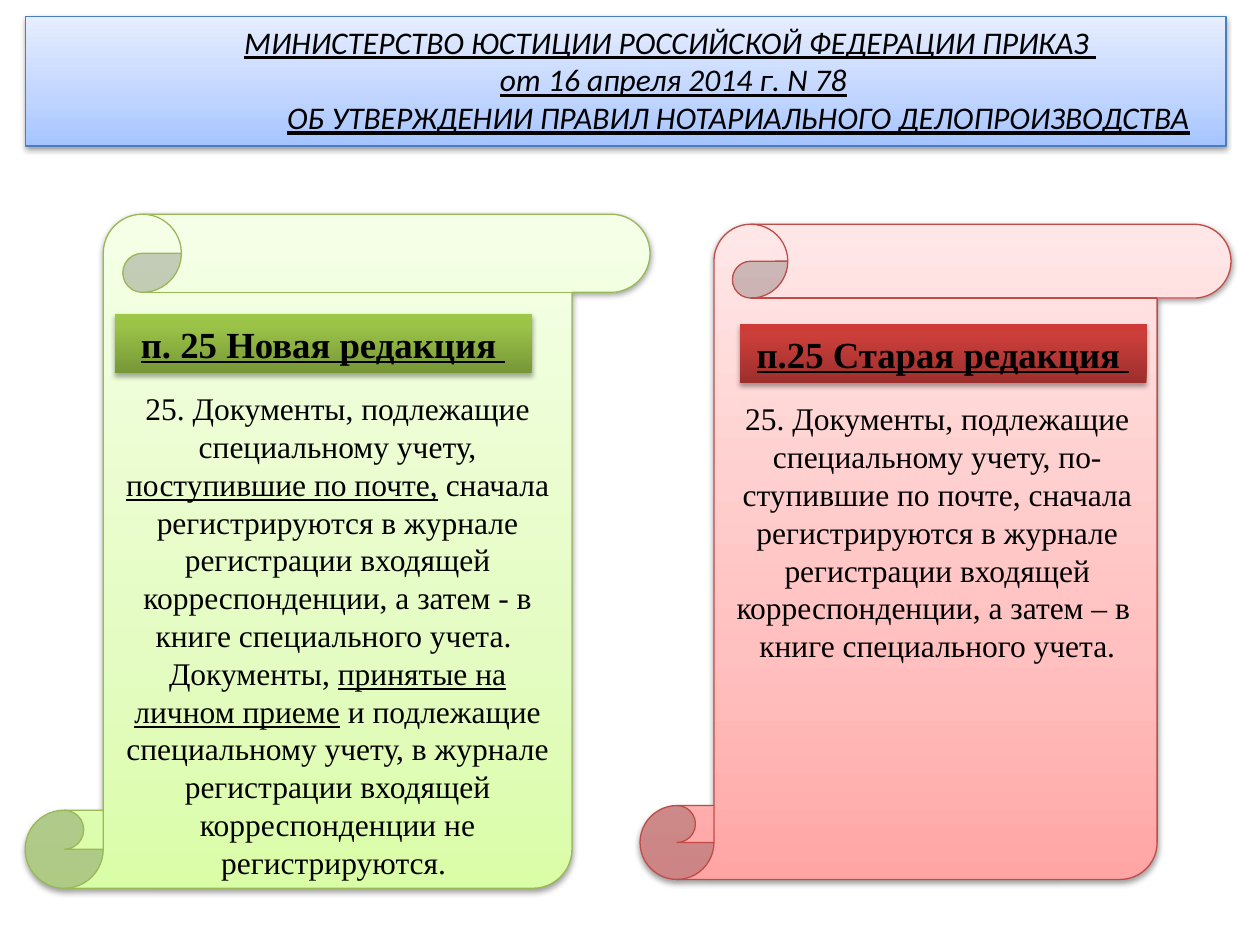
from dataclasses import dataclass

import pptx
import pptx.dml.color
import pptx.enum.shapes
import pptx.enum.text
import pptx.oxml
import pptx.oxml.ns
import pptx.util

# Slide grid: 100 columns by 75 rows
prs = pptx.Presentation()
prs.slide_width = pptx.util.Inches(10)
prs.slide_height = pptx.util.Inches(7.5)
COL, ROW = prs.slide_width / 100, prs.slide_height / 75

COLORS = {
    "text": "000000",
    "green_line": "98B955",
    "red_line": "BF4C48",
    "blue_line": "4B7EBC",
}
# Gradient stops from bottom to top: position in percent and colour
GRADIENTS = {
    "green_light": {0: "DAFDA7", 35: "E4FCC2", 100: "F5FFE7"},
    "red_light": {0: "FFA6A5", 35: "FFC0BF", 100: "FFE7E7"},
    "blue_light": {0: "A4C4FF", 35: "BFD4FF", 100: "E6EEFF"},
    "green_dark": {0: "779737", 80: "9BC348", 100: "9DC746"},
    "red_dark": {0: "9C2F2D", 80: "CB3E3A", 100: "CE3B37"},
}
SHAPE = pptx.enum.shapes.MSO_SHAPE
ALIGN = pptx.enum.text.PP_ALIGN
ANCHOR = pptx.enum.text.MSO_ANCHOR
SERIF = "Times New Roman"


@dataclass
class Box:
    """Place on the grid, in columns and rows."""
    col: float
    row: float
    cols: float
    rows: float

    def emu(self) -> list[int]:
        return [round(v) for v in (self.col * COL, self.row * ROW,
                                   self.cols * COL, self.rows * ROW)]


@dataclass
class Edition:
    """One wording of the rule; odd runs of a paragraph are underlined."""
    hue: str
    scroll: Box
    heading_box: Box
    heading: str
    body_box: Box
    body: list[list[str]]


def rgb(name: str) -> pptx.dml.color.RGBColor:
    return pptx.dml.color.RGBColor.from_string(COLORS[name])


def xml(tag: str, attrs: str, inner: str):
    ns = pptx.oxml.ns.nsdecls("a")
    return pptx.oxml.parse_xml(f"<a:{tag} {ns} {attrs}>{inner}</a:{tag}>")


def add_panel(slide, kind, box: Box, gradient: str, line: str = "",
              opacity: int = 38, drop: float = 1.6):
    """Add a shape with a vertical gradient and a soft shadow below it."""
    sp = slide.shapes.add_shape(kind, *box.emu())
    sp.fill.gradient()
    sp.fill.gradient_angle = 90
    stops = sp.fill._fill._gradFill.gsLst
    for stop in list(stops):
        stops.remove(stop)
    for pos, color in GRADIENTS[gradient].items():
        stops.append(xml("gs", f'pos="{pos * 1000}"', f'<a:srgbClr val="{color}"/>'))
    if line:
        sp.line.color.rgb = rgb(line)
        sp.line.width = pptx.util.Pt(0.75)
    else:
        sp.line.fill.background()
    sp.shadow.inherit = False
    effects = sp._element.spPr.find(pptx.oxml.ns.qn("a:effectLst"))
    effects.append(xml(
        "outerShdw",
        f'blurRad="{pptx.util.Pt(3.1)}" dist="{pptx.util.Pt(drop)}" '
        'dir="5400000" rotWithShape="0"',
        f'<a:srgbClr val="000000"><a:alpha val="{opacity * 1000}"/></a:srgbClr>'))
    return sp


def write(tf, paragraphs: list[list[str]], size: float, font: str, align) -> None:
    """Fill a text frame, underlining every second run."""
    tf.word_wrap = True
    for i, runs in enumerate(paragraphs):
        p = tf.paragraphs[0] if i == 0 else tf.add_paragraph()
        p.alignment = align
        p.font.size = pptx.util.Pt(size)
        p.font.name = font
        p.font.color.rgb = rgb("text")
        for j, text in enumerate(runs):
            r = p.add_run()
            r.text = text
            if j % 2:
                r.font.underline = True


def add_body(slide, edition: Edition) -> None:
    tf = slide.shapes.add_textbox(*edition.body_box.emu()).text_frame
    write(tf, edition.body, 18, SERIF, ALIGN.CENTER)


def add_heading(slide, edition: Edition) -> None:
    sp = add_panel(slide, SHAPE.RECTANGLE, edition.heading_box,
                   f"{edition.hue}_dark", opacity=35, drop=1.8)
    tf = sp.text_frame
    tf.vertical_anchor = ANCHOR.MIDDLE
    write(tf, [[edition.heading]], 21, SERIF, ALIGN.CENTER)
    tf.paragraphs[0].font.bold = True
    tf.paragraphs[0].font.underline = True


def add_title(slide, box: Box, lines: dict[str, float]) -> None:
    """Add the banner; each line has its own indent in columns."""
    sp = add_panel(slide, SHAPE.RECTANGLE, box, "blue_light", "blue_line")
    tf = sp.text_frame
    tf.vertical_anchor = ANCHOR.TOP
    write(tf, [[text] for text in lines], 18, "Calibri", ALIGN.LEFT)
    for p, indent in zip(tf.paragraphs, lines.values()):
        p._p.get_or_add_pPr().set("marL", str(round(indent * COL)))
        p.line_spacing = pptx.util.Pt(21.6)
        p.font.italic = True
        p.font.underline = True


EDITIONS = [
    Edition(
        "green", Box(2, 17, 49.6, 53.5),
        Box(9.1, 24.9, 33.1, 4.7), "п. 25 Новая редакция ",
        Box(8.3, 30.4, 37, 43.4),
        [["25. Документы, подлежащие специальному учету, ",
          "поступившие по почте,",
          " сначала регистрируются в журнале регистрации входящей "
          "корреспонденции, а затем - в книге специального учета. "],
         ["Документы, ",
          "принятые на личном приеме",
          " и подлежащие специальному учету, в журнале регистрации "
          "входящей корреспонденции не регистрируются. "]]),
    Edition(
        "red", Box(50.8, 17.8, 46.9, 52),
        Box(58.7, 25.7, 32.3, 4.7), "п.25 Старая редакция ",
        Box(57.1, 31.2, 34.6, 22.2),
        [["25. Документы, подлежащие специальному учету, по-"],
         ["ступившие по почте, сначала регистрируются в журнале "
          "регистрации входящей корреспонденции, а затем – в "],
         ["книге специального учета."]]),
]

slide = prs.slides.add_slide(prs.slide_layouts[6])

# Scrolls at the back, then the texts and their headings
for edition in EDITIONS:
    add_panel(slide, SHAPE.VERTICAL_SCROLL, edition.scroll,
              f"{edition.hue}_light", f"{edition.hue}_line")
for edition in EDITIONS:
    add_body(slide, edition)
for edition in EDITIONS:
    add_heading(slide, edition)

# Title banner
add_title(slide, Box(2, 1.3, 95.3, 10.3), {
    "МИНИСТЕРСТВО ЮСТИЦИИ РОССИЙСКОЙ ФЕДЕРАЦИИ ПРИКАЗ ": 16.4,
    "от 16 апреля 2014 г. N 78": 36.7,
    "ОБ УТВЕРЖДЕНИИ ПРАВИЛ НОТАРИАЛЬНОГО ДЕЛОПРОИЗВОДСТВА": 19.8,
})

prs.save("out.pptx")
